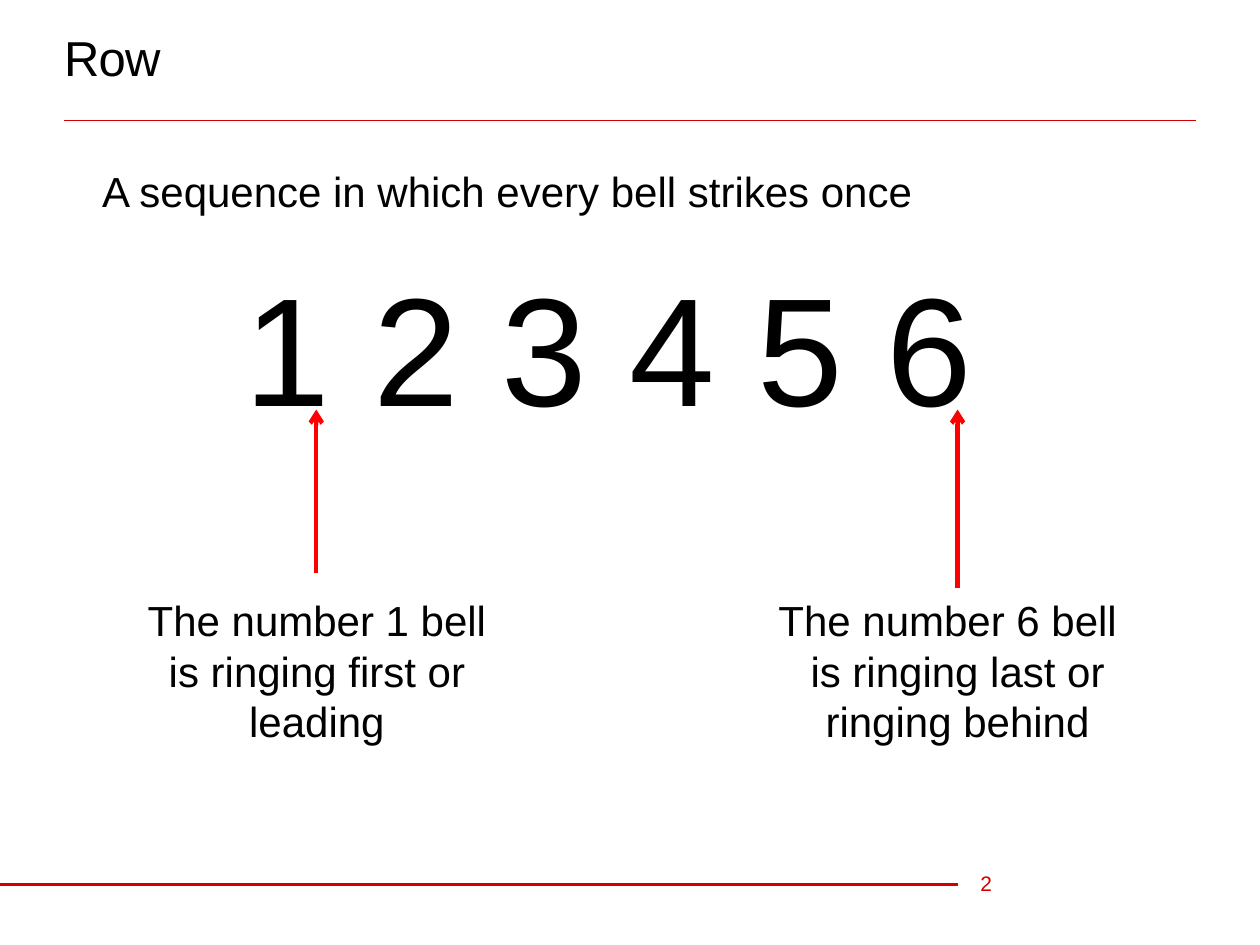
"""Build the slide that explains a row of six bells."""
from lxml.etree import SubElement as Sub
from pptx import Presentation
from pptx.dml.color import RGBColor as Rgb
from pptx.enum.shapes import MSO_CONNECTOR as Link
from pptx.enum.text import MSO_ANCHOR as Anchor, PP_ALIGN as Align
from pptx.oxml.ns import qn
from pptx.util import Pt

HUES = {"text": "000000", "rule": "D20000", "arrow": "FF0000"}
LEFT, WIDE = 36.72, 646.56
BARE, INSET = (0, 0), (7.2, 3.6)
MID, TOP = Anchor.MIDDLE, Anchor.TOP

TEXTS = {
    "title": ((LEFT, 3.6, WIDE, 58.32), BARE, MID, [
        {"text": "Row", "size": 28, "track": -50}]),
    "row": ((LEFT, 94.3, WIDE, 360), BARE, TOP, [
        {"text": "A sequence in which every bell strikes once", "left": 21.6},
        {"text": "1 2 3 4 5 6", "size": 88, "align": Align.CENTER,
         "right": 24.5, "before": 21}]),
    "first": ((67.68, 336.24, 226.8, 94.32), INSET, TOP, [
        {"text": "The number 1 bell is ringing first or leading",
         "align": Align.CENTER}]),
    "last": ((437.76, 336.24, 218.88, 94.32), INSET, TOP, [
        {"text": "The number 6 bell"},
        {"text": "is ringing last or ringing behind",
         "align": Align.CENTER}]),
    "page": ((560.16, 490.32, 36.72, 28.8), BARE, MID, [
        {"text": "2", "size": 12, "hue": "rule"}]),
}

LINES = [
    {"ends": (LEFT, 69.12, LEFT + WIDE, 69.12), "hue": "rule", "width": 0.5},
    {"ends": (0, 505.44, 547.2, 505.44), "hue": "rule", "width": 2},
    {"ends": (180.72, 327.6, 180.72, 234), "hue": "arrow", "width": 2.5,
     "head": True},
    {"ends": (547.2, 336.24, 547.2, 234), "hue": "arrow", "width": 2.5,
     "head": True, "from": "last"},
]


def add_text(slide, spot, inset, anchor, paras):
    box = slide.shapes.add_textbox(*map(Pt, spot))
    frame = box.text_frame
    side, edge = map(Pt, inset)
    look = {"word_wrap": True, "vertical_anchor": anchor,
            "margin_left": side, "margin_right": side,
            "margin_top": edge, "margin_bottom": edge}
    for key, val in look.items():
        setattr(frame, key, val)
    for i, item in enumerate(paras):
        para = frame.add_paragraph() if i else frame.paragraphs[0]
        para.alignment = item.get("align", Align.LEFT)
        para.space_before = Pt(item.get("before", 0))
        props = para._p.get_or_add_pPr()
        for key, name in (("left", "marL"), ("right", "marR")):
            if key in item:
                props.set(name, str(Pt(item[key])))
        run = para.add_run()
        run.text = item["text"]
        face = {"name": "Arial", "size": Pt(item.get("size", 24))}
        for key, val in face.items():
            setattr(run.font, key, val)
        run.font.color.rgb = Rgb.from_string(HUES[item.get("hue", "text")])
        if "track" in item:
            run._r.get_or_add_rPr().set("spc", str(item["track"]))
    return box


def add_line(slide, item, boxes):
    line = slide.shapes.add_connector(Link.STRAIGHT, *map(Pt, item["ends"]))
    line.line.color.rgb = Rgb.from_string(HUES[item["hue"]])
    line.line.width = Pt(item["width"])
    if item.get("head"):
        Sub(line.line._get_or_add_ln(), qn("a:tailEnd"), type="arrow")
    Sub(line._element.spPr, qn("a:effectLst"))
    if "from" in item:
        line.begin_connect(boxes[item["from"]], 0)


def main():
    deck = Presentation()
    deck.slide_width, deck.slide_height = Pt(720), Pt(540)
    slide = deck.slides.add_slide(deck.slide_layouts[6])
    boxes = {name: add_text(slide, *part) for name, part in TEXTS.items()}
    for item in LINES:
        add_line(slide, item, boxes)
    deck.save("out.pptx")


if __name__ == "__main__":
    main()
